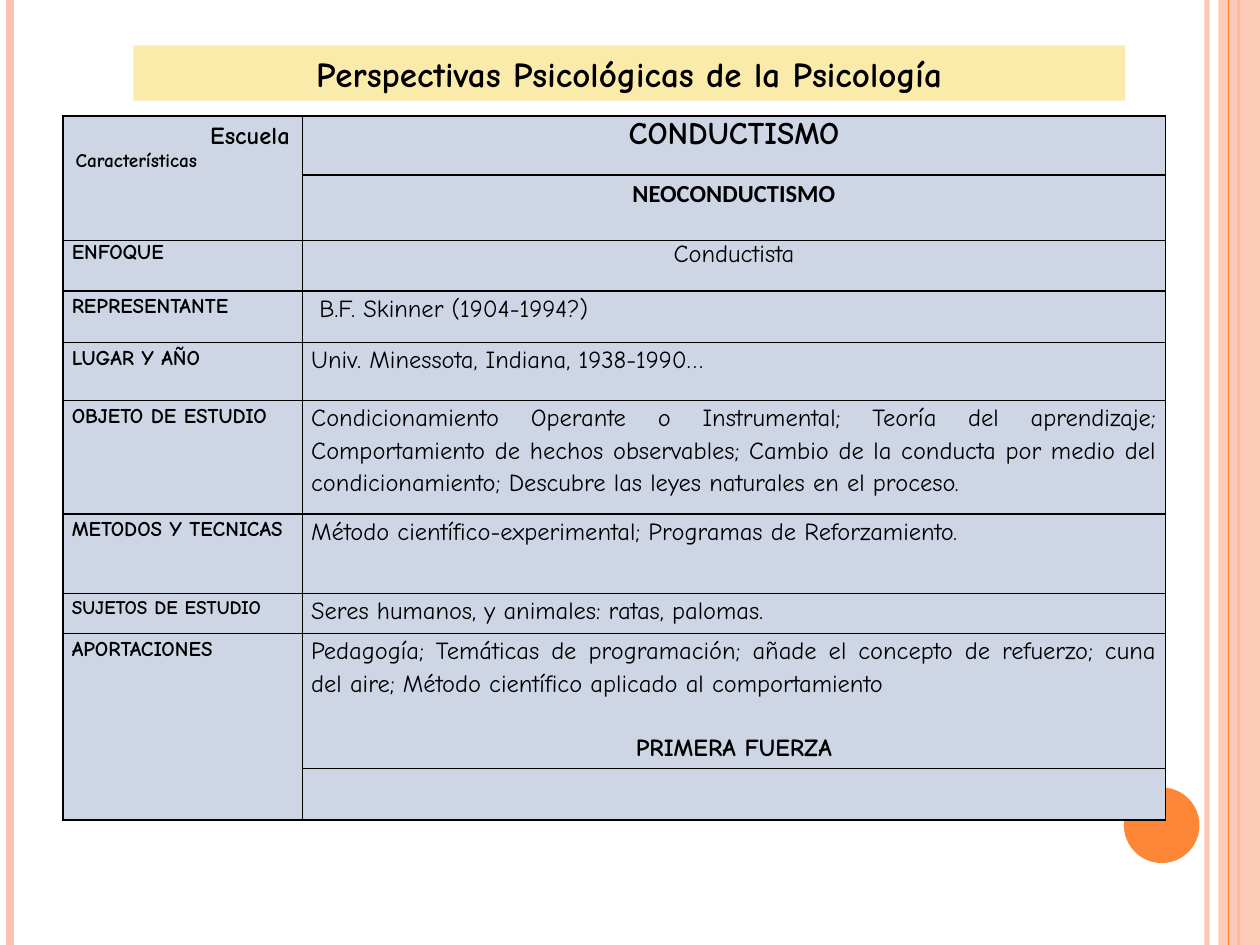
from lxml import etree
from pptx import Presentation
from pptx import util as u
from pptx.dml.color import RGBColor
from pptx.enum import shapes, text
from pptx.oxml.ns import qn

INK, CELL, ORANGE, PEACH, SAND = "000000", "CED6E6", "FE8637", "FEC3AE", "FBEBAB"
LEFT, CENTER, RIGHT, JUSTIFY = (
    text.PP_ALIGN.LEFT, text.PP_ALIGN.CENTER, text.PP_ALIGN.RIGHT, text.PP_ALIGN.JUSTIFY)


def paint(fill, color, alpha=100):
    fill.solid()
    fill.fore_color.rgb = RGBColor.from_string(color)
    if alpha < 100:
        clr = fill._xPr.find(".//" + qn("a:srgbClr"))
        etree.SubElement(clr, qn("a:alpha")).set("val", str(alpha * 1000))


class Deck:
    font = "Comic Neue"

    def __init__(self, prs):
        self.s = prs.slides.add_slide(prs.slide_layouts[6])

    def line(self, x, color, width, alpha=100):
        cx = self.s.shapes.add_connector(
            shapes.MSO_CONNECTOR.STRAIGHT, u.Inches(x), 0, u.Inches(x), u.Inches(7.5))
        cx.line.width = u.Pt(width)
        paint(cx.line.fill, color, alpha)
        etree.SubElement(cx._element.spPr, qn("a:effectLst"))

    def shape(self, kind, box, color, alpha=100):
        sp = self.s.shapes.add_shape(kind, *map(u.Inches, box))
        sp.shadow.inherit = False
        sp.line.fill.background()
        paint(sp.fill, color, alpha)
        return sp

    def add_text(self, p, words, size, bold=True, align=LEFT, spacing=1.0, before=0, font=None):
        p.alignment = align
        p.line_spacing = spacing
        p.space_before = u.Pt(before)
        r = p.add_run()
        r.text = words
        r.font.name = font or self.font
        r.font.size = u.Pt(size)
        r.font.bold = bold
        paint(r.font.fill, INK)

    def table(self, left, top, cols, rows):
        frame = self.s.shapes.add_table(
            len(rows), len(cols), u.Inches(left), u.Inches(top),
            u.Inches(sum(cols)), u.Inches(sum(rows)))
        tb = frame.table
        tb.first_row = tb.horz_banding = False
        for col, width in zip(tb.columns, cols):
            col.width = u.Inches(width)
        for row, height in zip(tb.rows, rows):
            row.height = u.Inches(height)
        for cell in tb.iter_cells():
            self.border(cell)
            paint(cell.fill, CELL)
        return tb

    def border(self, cell):
        for side in ("a:lnL", "a:lnR", "a:lnT", "a:lnB"):
            ln = etree.SubElement(cell._tc.get_or_add_tcPr(), qn(side), w=str(u.Pt(1)))
            fill = etree.SubElement(ln, qn("a:solidFill"))
            etree.SubElement(fill, qn("a:srgbClr"), val=INK)

    def cell(self, cell, *paragraphs, tight=True):
        if tight:
            cell.margin_left = cell.margin_right = u.Inches(0.07)
            cell.margin_top = cell.margin_bottom = 0
        tf = cell.text_frame
        for i, style in enumerate(paragraphs):
            self.add_text(tf.add_paragraph() if i else tf.paragraphs[0], **style)


ROWS = [
    ("REPRESENTANTE", 12, " B.F. Skinner (1904-1994?)"),
    ("LUGAR Y AÑO", 12, "Univ. Minessota, Indiana, 1938-1990…"),
    ("OBJETO DE ESTUDIO", 12,
     "Condicionamiento Operante o Instrumental; Teoría del aprendizaje; "
     "Comportamiento de hechos observables; Cambio de la conducta por medio del "
     "condicionamiento; Descubre las leyes naturales en el proceso."),
    ("METODOS Y TECNICAS", 12, "Método científico-experimental; Programas de Reforzamiento."),
    ("SUJETOS DE ESTUDIO", 11, "Seres humanos, y animales: ratas, palomas."),
    ("APORTACIONES", 12,
     "Pedagogía; Temáticas de programación; añade el concepto de refuerzo; cuna "
     "del aire; Método científico aplicado al comportamiento"),
]


def main():
    prs = Presentation()
    prs.slide_width, prs.slide_height = u.Inches(10), u.Inches(7.5)
    d = Deck(prs)
    rect, oval = shapes.MSO_SHAPE.RECTANGLE, shapes.MSO_SHAPE.OVAL

    d.line(9.58, PEACH, 3, 93)
    d.line(0.08, PEACH, 4.5)
    d.line(9.83, ORANGE, 1.5)
    d.shape(rect, (9.67, 0, 0.33, 7.5), PEACH, 87)
    d.line(9.75, ORANGE, 0.75)
    d.shape(oval, (8.92, 6.25, 0.6, 0.6), ORANGE)

    title = d.shape(rect, (1.06, 0.36, 7.87, 0.44), SAND)
    title.text_frame.word_wrap = True
    d.add_text(title.text_frame.paragraphs[0], "Perspectivas Psicológicas de la Psicología",
               20, align=CENTER)

    tb = d.table(0.5, 0.92, (1.9, 6.85),
                 (0.47, 0.52, 0.4, 0.41, 0.46, 0.9, 0.63, 0.32, 1.07, 0.41))
    tb.cell(0, 0).merge(tb.cell(1, 0))
    tb.cell(8, 0).merge(tb.cell(9, 0))

    d.cell(tb.cell(0, 0), dict(words="Escuela", size=14, align=RIGHT),
           dict(words="Características", size=11), tight=False)
    d.cell(tb.cell(0, 1), dict(words="CONDUCTISMO", size=18, align=CENTER))
    d.cell(tb.cell(1, 1), dict(words="NEOCONDUCTISMO", size=14, align=CENTER,
                               spacing=1.15, font="Calibri"))
    d.cell(tb.cell(2, 0), dict(words="ENFOQUE", size=12))
    d.cell(tb.cell(2, 1), dict(words="Conductista", size=14, bold=False, align=CENTER))

    for i, (label, size, words) in enumerate(ROWS, 3):
        d.cell(tb.cell(i, 0), dict(words=label, size=size, spacing=1.15))
        d.cell(tb.cell(i, 1), dict(words=words, size=14, bold=False,
                                   align=JUSTIFY, spacing=1.15))
    d.add_text(tb.cell(8, 1).text_frame.add_paragraph(), "PRIMERA FUERZA", 14,
               align=CENTER, spacing=1.15, before=18)

    prs.save("out.pptx")


if __name__ == "__main__":
    main()
